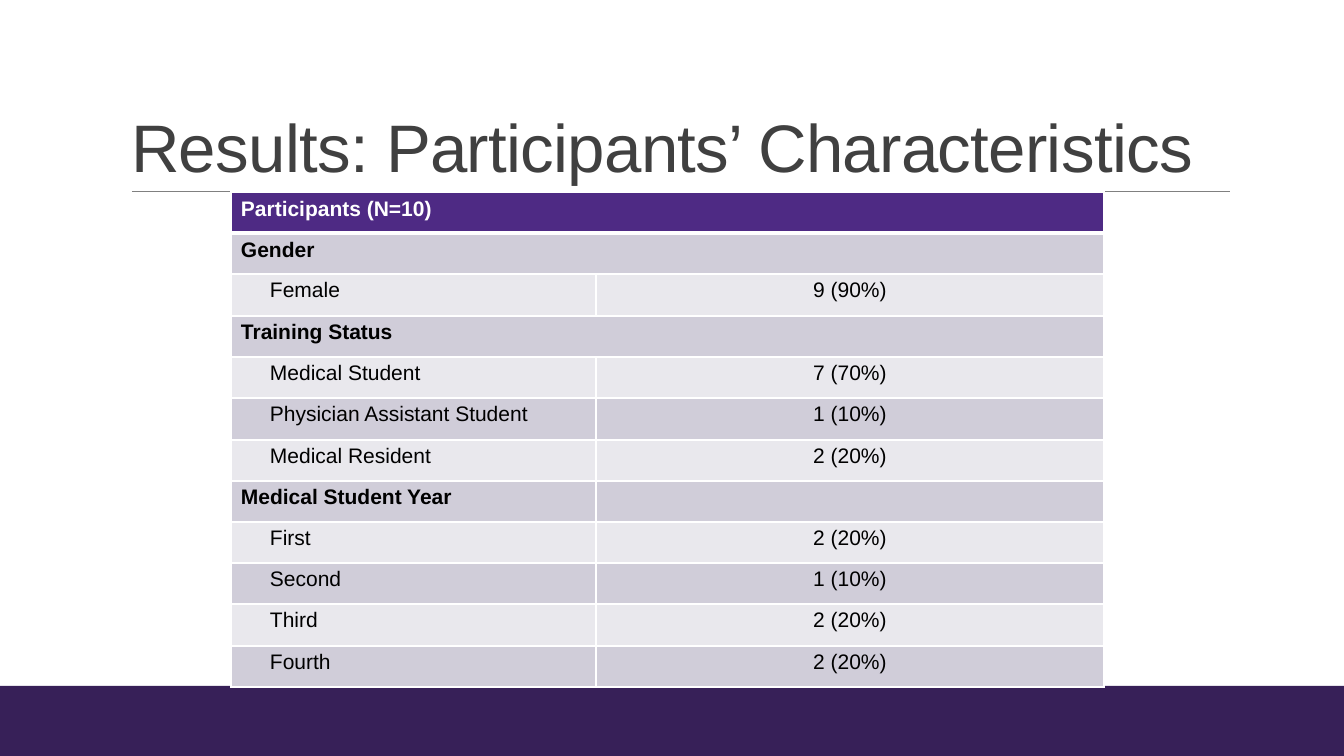
import pptx
import pptx.util
import pptx.dml.color
import pptx.enum.shapes
import pptx.enum.text
import pptx.oxml
import pptx.oxml.ns
import lxml.etree

SCALE = 914400 / 100.8
ALIGN = pptx.enum.text.PP_ALIGN
ANCHOR = pptx.enum.text.MSO_ANCHOR


def px(n):
    return pptx.util.Emu(round(n * SCALE))


def color(target, value):
    target.rgb = pptx.dml.color.RGBColor.from_string(value)


prs = pptx.Presentation()
prs.slide_width, prs.slide_height = px(1344), px(756)
s = prs.slides.add_slide(prs.slide_layouts[5])

band = s.shapes.add_shape(
    pptx.enum.shapes.MSO_SHAPE.RECTANGLE, 0, px(686), px(1344), px(70))
band.shadow.inherit = False
band.fill.solid()
color(band.fill.fore_color, "372058")
band.line.fill.background()

rule = s.shapes.add_connector(
    pptx.enum.shapes.MSO_CONNECTOR.STRAIGHT, px(132), px(191), px(1230), px(191))
rule.line.width = pptx.util.Pt(0.5)
color(rule.line.color, "808080")
lxml.etree.SubElement(rule._element.spPr, pptx.oxml.ns.qn("a:effectLst"))

title = s.shapes.title
title.left, title.top, title.width, title.height = px(121), px(31), px(1109), px(160)
tf = title.text_frame
tf.text = "Results: Participants’ Characteristics"
tf.word_wrap = True
tf.auto_size = pptx.enum.text.MSO_AUTO_SIZE.NONE
tf.vertical_anchor = ANCHOR.BOTTOM
p = tf.paragraphs[0]
p.alignment = ALIGN.LEFT
p.line_spacing = 0.85
r = p.runs[0]
for key, value in {"name": "Arial", "size": pptx.util.Pt(48), "bold": False}.items():
    setattr(r.font, key, value)
color(r.font.color, "404040")
r._r.get_or_add_rPr().set("spc", "-50")

rows = [
    ("header", "Participants (N=10)", ""),
    ("group", "Gender", ""),
    ("item", "Female", "9 (90%)"),
    ("group", "Training Status", ""),
    ("item", "Medical Student", "7 (70%)"),
    ("item", "Physician Assistant Student", "1 (10%)"),
    ("item", "Medical Resident", "2 (20%)"),
    ("group", "Medical Student Year", ""),
    ("item", "First", "2 (20%)"),
    ("item", "Second", "1 (10%)"),
    ("item", "Third", "2 (20%)"),
    ("item", "Fourth", "2 (20%)"),
]
merged = {"Participants (N=10)", "Gender", "Training Status"}
table_height = 495
table = s.shapes.add_table(
    len(rows), 2, px(231), px(192), px(873), px(table_height)).table
for column, width in zip(table.columns, (365, 508)):
    column.width = px(width)

for i, (kind, label, result) in enumerate(rows):
    top, bottom = (round(n * table_height / len(rows)) for n in (i, i + 1))
    table.rows[i].height = px(bottom - top)
    if kind == "header":
        fill = "4E2A84"
    else:
        fill = "D0CDD9" if i % 2 else "E9E8ED"
    for j, text in enumerate((label, result)):
        cell = table.cell(i, j)
        cell.fill.solid()
        color(cell.fill.fore_color, fill)
        cell.margin_left = px(39 if kind == "item" and j == 0 else 10)
        p = cell.text_frame.paragraphs[0]
        p.alignment = ALIGN.CENTER if j else ALIGN.LEFT
        font = p.font
        if text:
            r = p.add_run()
            r.text = text
            font = r.font
        for key, value in {"name": "Arial", "size": pptx.util.Pt(15),
                           "bold": kind != "item"}.items():
            setattr(font, key, value)
        color(font.color, "FFFFFF" if kind == "header" else "000000")
        tcPr = cell._tc.get_or_add_tcPr()
        for n, side in enumerate("LRTB"):
            thick = (i, side) in ((0, "B"), (1, "T"))
            width = pptx.util.Pt(3 if thick else 1)
            tcPr.insert(n, pptx.oxml.parse_xml(
                f'<a:ln{side} {pptx.oxml.ns.nsdecls("a")} w="{width}"><a:solidFill>'
                f'<a:srgbClr val="FFFFFF"/></a:solidFill></a:ln{side}>'))
    if label in merged:
        table.cell(i, 0).merge(table.cell(i, 1))

prs.save("out.pptx")
